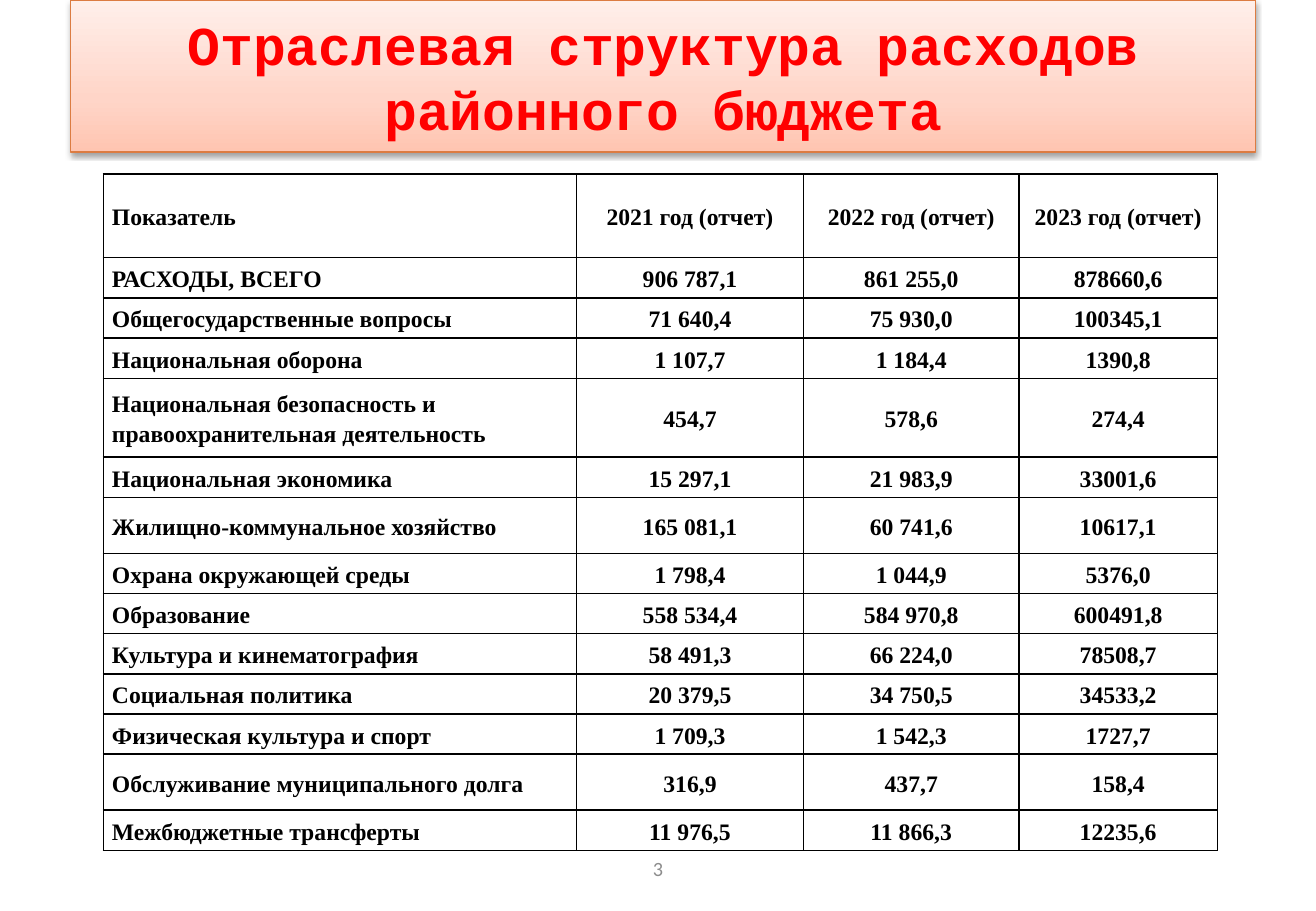
import copy
from lxml import etree
from pptx import Presentation
from pptx import util as u
from pptx.dml import color
from pptx.enum import shapes, text
from pptx.oxml import ns, parse_xml


def rgb(value):
    return color.RGBColor.from_string(value)


presentation = Presentation()
presentation.slide_width = u.Cm(27.51)
presentation.slide_height = u.Cm(19.05)
slide = presentation.slides.add_slide(presentation.slide_layouts[6])

title = slide.shapes.add_shape(shapes.MSO_SHAPE.RECTANGLE, u.Cm(1.48), u.Cm(0), u.Cm(24.77), u.Cm(3.18))
title.fill.gradient()
title.fill.gradient_angle = 90
stops = title.fill.gradient_stops
first_stop = title._element.spPr.find(".//" + ns.qn("a:gs"))
first_stop.addnext(copy.deepcopy(first_stop))
stops = title.fill.gradient_stops
for stop, (position, shade) in zip(stops, [(0, "FFC5B1"), (0.35, "FFD5C8"), (1, "FFEFEA")]):
    stop.position = position
    stop.color.rgb = rgb(shade)
title.line.color.rgb = rgb("DC7C42")
title.line.width = u.Pt(0.75)
title._element.spPr.append(parse_xml(
    f'<a:effectLst {ns.nsdecls("a")}><a:outerShdw blurRad="40000" dist="20000" dir="5400000" rotWithShape="0">'
    '<a:srgbClr val="000000"><a:alpha val="38000"/></a:srgbClr></a:outerShdw></a:effectLst>'))
title.text_frame.word_wrap = True
title.text_frame.vertical_anchor = text.MSO_ANCHOR.MIDDLE
paragraph = title.text_frame.paragraphs[0]
paragraph.text = "Отраслевая структура расходов районного бюджета"
paragraph.alignment = text.PP_ALIGN.CENTER
paragraph.font.name = "Courier New"
paragraph.font.size = u.Pt(32.4)
paragraph.font.bold = True
paragraph.font.color.rgb = rgb("FF0000")

NORMAL, MEDIUM, DOUBLE, HEADER = 0.84, 1.17, 1.65, 1.75
expenses = [
    (HEADER, "Показатель", "2021 год (отчет)", "2022 год (отчет)", "2023 год (отчет)"),
    (NORMAL, "РАСХОДЫ, ВСЕГО", "906 787,1", "861 255,0", "878660,6"),
    (NORMAL, "Общегосударственные вопросы", "71 640,4", "75 930,0", "100345,1"),
    (NORMAL, "Национальная оборона", "1 107,7", "1 184,4", "1390,8"),
    (DOUBLE, "Национальная безопасность и правоохранительная деятельность", "454,7", "578,6", "274,4"),
    (NORMAL, "Национальная экономика", "15 297,1", "21 983,9", "33001,6"),
    (MEDIUM, "Жилищно-коммунальное хозяйство", "165 081,1", "60 741,6", "10617,1"),
    (NORMAL, "Охрана окружающей среды", "1 798,4", "1 044,9", "5376,0"),
    (NORMAL, "Образование", "558 534,4", "584 970,8", "600491,8"),
    (NORMAL, "Культура и кинематография", "58 491,3", "66 224,0", "78508,7"),
    (NORMAL, "Социальная политика", "20 379,5", "34 750,5", "34533,2"),
    (NORMAL, "Физическая культура и спорт", "1 709,3", "1 542,3", "1727,7"),
    (MEDIUM, "Обслуживание муниципального долга", "316,9", "437,7", "158,4"),
    (NORMAL, "Межбюджетные трансферты", "11 976,5", "11 866,3", "12235,6"),
]
widths = [9.89, 4.75, 4.5, 4.15]
height = sum(row[0] for row in expenses)
table = slide.shapes.add_table(
    len(expenses), len(widths), u.Cm(2.16), u.Cm(3.64), u.Cm(sum(widths)), u.Cm(height)).table
table.first_row = False
table.horz_banding = False
for column, width in zip(table.columns, widths):
    column.width = u.Cm(width)
for row, (row_height, *values) in zip(table.rows, expenses):
    row.height = u.Cm(row_height)
    for index, (cell, value) in enumerate(zip(row.cells, values)):
        cell.margin_left = cell.margin_right = u.Cm(0.18)
        cell.margin_top = cell.margin_bottom = u.Cm(0.1)
        cell.vertical_anchor = text.MSO_ANCHOR.MIDDLE
        properties = cell._tc.get_or_add_tcPr()
        for side in ("lnL", "lnR", "lnT", "lnB"):
            border = etree.SubElement(properties, ns.qn(f"a:{side}"), w=str(u.Pt(1)))
            fill = etree.SubElement(border, ns.qn("a:solidFill"))
            etree.SubElement(fill, ns.qn("a:srgbClr"), val="000000")
        cell.fill.background()
        paragraph = cell.text_frame.paragraphs[0]
        paragraph.text = value
        paragraph.alignment = text.PP_ALIGN.CENTER if index else text.PP_ALIGN.LEFT
        paragraph.line_spacing = 1.15
        paragraph.space_after = u.Pt(10)
        paragraph.font.name = "Times New Roman"
        paragraph.font.size = u.Pt(14)
        paragraph.font.bold = True
        paragraph.font.color.rgb = rgb("000000")

page_number = slide.shapes.add_textbox(u.Cm(9.4), u.Cm(17.65), u.Cm(8.71), u.Cm(1.02))
page_number.text_frame.word_wrap = True
page_number.text_frame.vertical_anchor = text.MSO_ANCHOR.MIDDLE
paragraph = page_number.text_frame.paragraphs[0]
paragraph.text = "3"
paragraph.alignment = text.PP_ALIGN.CENTER
paragraph.font.name = "Calibri"
paragraph.font.size = u.Pt(12)
paragraph.font.color.rgb = rgb("8C8C8C")

presentation.save("out.pptx")
